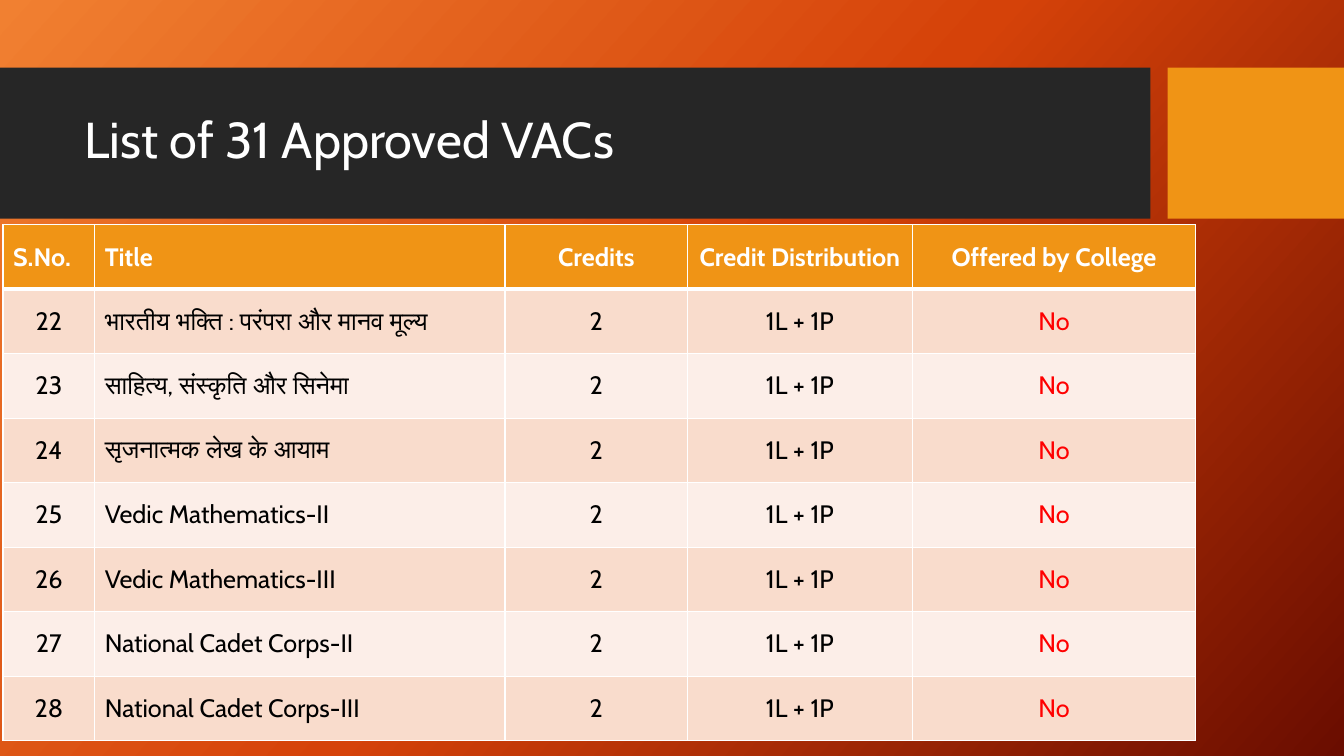
"""Build the slide that lists approved value added courses 22 to 28."""
from dataclasses import dataclass

from lxml.etree import SubElement
from pptx import Presentation
from pptx.dml.color import RGBColor
from pptx.enum.shapes import MSO_SHAPE
from pptx.enum.text import MSO_ANCHOR, PP_ALIGN
from pptx.oxml.ns import qn
from pptx.slide import Slide
from pptx.table import _Cell
from pptx.text.text import _Paragraph
from pptx.util import Inches, Pt

FONT = "Cabin"
WHITE, BLACK, RED = "FFFFFF", "000000", "FF0000"
ORANGE, CHARCOAL = "F09415", "262626"
ROW_FILLS = ("F9DCCC", "FCEEE8")
BACKGROUND_STOPS = {0: "F18031", 50: "D54209", 100: "6A0D00"}
BACKGROUND_ANGLE = 42
TABLE_LEFT, TABLE_TOP, ROW_HEIGHT = 0.03, 2.23, 0.64
FIRST_NUMBER = 22
COURSES = (
    "भारतीय भक्ति : परंपरा और मानव मूल्य",
    "साहित्य, संस्कृति और सिनेमा",
    "सृजनात्मक लेख के आयाम",
    "Vedic Mathematics-II",
    "Vedic Mathematics-III",
    "National Cadet Corps-II",
    "National Cadet Corps-III",
)


@dataclass(frozen=True)
class Band:
    left: float
    width: float
    color: str


@dataclass(frozen=True)
class Column:
    heading: str
    width: float
    heading_alignment: PP_ALIGN = PP_ALIGN.CENTER
    alignment: PP_ALIGN = PP_ALIGN.CENTER
    color: str = BLACK


BANDS = (Band(0, 11.41, CHARCOAL), Band(11.58, 1.75, ORANGE))
COLUMNS = (
    Column("S.No.", 0.91, heading_alignment=PP_ALIGN.LEFT),
    Column("Title", 4.07, PP_ALIGN.LEFT, PP_ALIGN.LEFT),
    Column("Credits", 1.81),
    Column("Credit Distribution", 2.23),
    Column("Offered by College", 2.81, color=RED),
)


def rgb(color: str) -> RGBColor:
    return RGBColor.from_string(color)


def write_text(paragraph: _Paragraph, text: str, size: float, color: str, bold: bool = False) -> None:
    run = paragraph.add_run()
    run.text = text
    font_format = {"name": FONT, "size": Pt(size), "bold": bold}
    for attribute, value in font_format.items():
        setattr(run.font, attribute, value)
    run.font.color.rgb = rgb(color)


def paint_background(slide: Slide) -> None:
    fill = slide.background.fill
    fill.gradient()
    fill.gradient_angle = 360 - BACKGROUND_ANGLE
    stop_list = slide.element.xpath(".//a:gsLst")[0]
    for stop in list(stop_list):
        stop_list.remove(stop)
    for position, color in BACKGROUND_STOPS.items():
        stop = SubElement(stop_list, qn("a:gs"), pos=str(position * 1000))
        SubElement(stop, qn("a:srgbClr"), val=color)


def add_band(slide: Slide, band: Band) -> None:
    shape = slide.shapes.add_shape(
        MSO_SHAPE.RECTANGLE, Inches(band.left), Inches(0.67), Inches(band.width), Inches(1.5)
    )
    shape.shadow.inherit = False
    shape.fill.solid()
    shape.fill.fore_color.rgb = rgb(band.color)
    shape.line.fill.background()


def add_title(slide: Slide, text: str) -> None:
    box = slide.shapes.add_textbox(Inches(0.74), Inches(0.82), Inches(10.51), Inches(1.18))
    frame = box.text_frame
    frame.word_wrap = True
    frame.vertical_anchor = MSO_ANCHOR.MIDDLE
    paragraph = frame.paragraphs[0]
    paragraph.line_spacing = 0.9
    write_text(paragraph, text, 36, WHITE)


def add_borders(cell: _Cell, widths: dict[str, float]) -> None:
    properties = cell._tc.get_or_add_tcPr()
    for side, width in widths.items():
        line = SubElement(properties, qn(f"a:ln{side}"), w=str(Pt(width)))
        fill = SubElement(line, qn("a:solidFill"))
        SubElement(fill, qn("a:srgbClr"), val=WHITE)


def add_course_table(slide: Slide) -> None:
    rows = [[column.heading for column in COLUMNS]]
    for number, course in enumerate(COURSES, FIRST_NUMBER):
        rows.append([str(number), course, "2", "1L + 1P", "No"])
    table = slide.shapes.add_table(
        len(rows), len(COLUMNS), Inches(TABLE_LEFT), Inches(TABLE_TOP),
        Inches(sum(column.width for column in COLUMNS)), Inches(ROW_HEIGHT * len(rows)),
    ).table
    for column_index, column in enumerate(COLUMNS):
        table.columns[column_index].width = Inches(column.width)
        for row_index, row in enumerate(rows):
            is_heading = row_index == 0
            cell = table.cell(row_index, column_index)
            cell.vertical_anchor = MSO_ANCHOR.MIDDLE
            top, bottom = (3 if row_index == 1 else 1), (3 if is_heading else 1)
            add_borders(cell, {"L": 1, "R": 1, "T": top, "B": bottom})
            cell.fill.solid()
            cell.fill.fore_color.rgb = rgb(ORANGE if is_heading else ROW_FILLS[(row_index - 1) % 2])
            paragraph = cell.text_frame.paragraphs[0]
            paragraph.alignment = column.heading_alignment if is_heading else column.alignment
            write_text(paragraph, row[column_index], 18, WHITE if is_heading else column.color, is_heading)


def main() -> None:
    presentation = Presentation()
    presentation.slide_width, presentation.slide_height = Inches(13.33), Inches(7.5)
    slide = presentation.slides.add_slide(presentation.slide_layouts[6])
    paint_background(slide)
    for band in BANDS:
        add_band(slide, band)
    add_title(slide, "List of 31 Approved VACs")
    add_course_table(slide)
    presentation.save("out.pptx")


if __name__ == "__main__":
    main()
